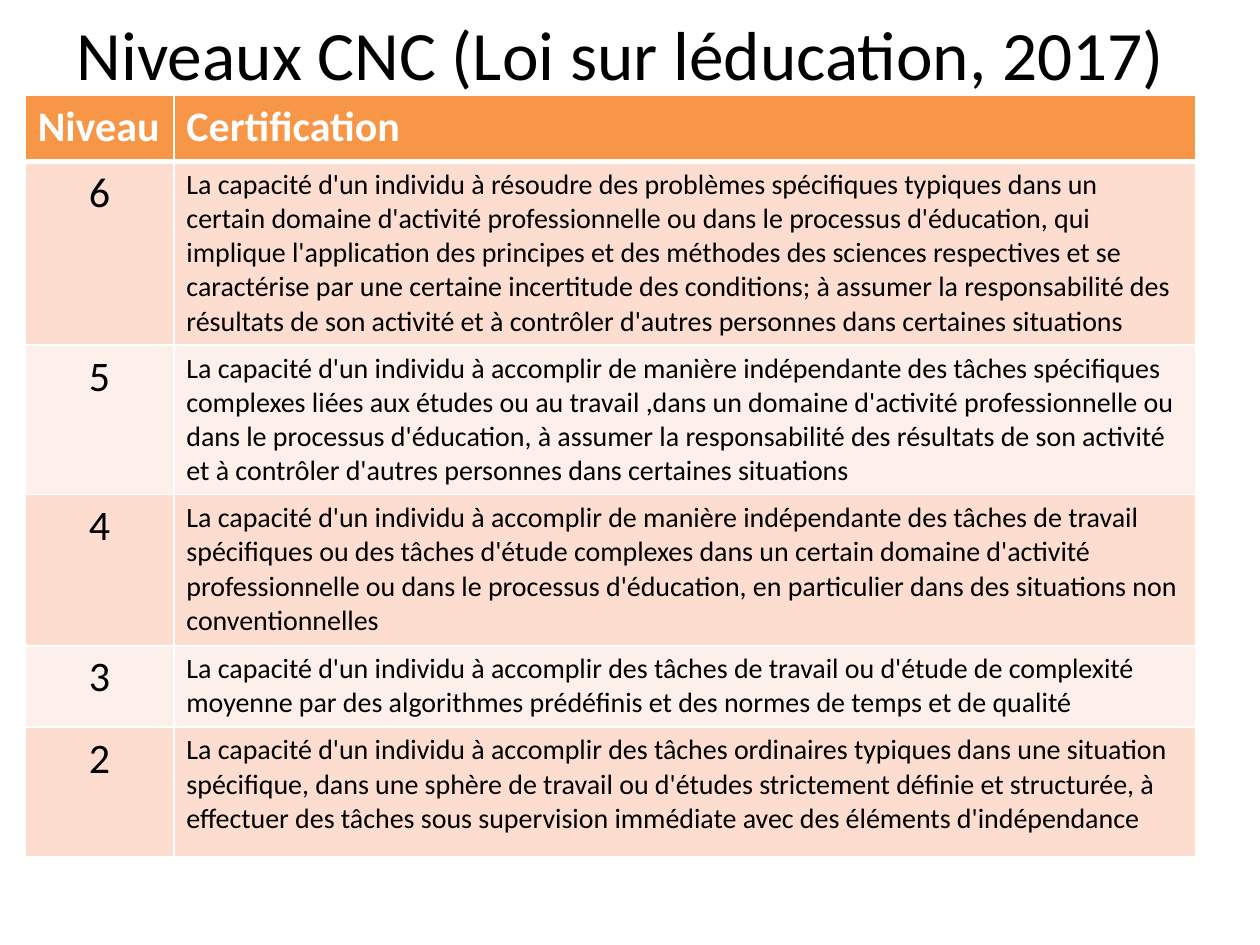
from dataclasses import dataclass

from lxml import etree
from pptx import Presentation
from pptx.dml.color import RGBColor
from pptx.enum.text import MSO_ANCHOR, MSO_AUTO_SIZE, PP_ALIGN
from pptx.oxml.ns import qn
from pptx.util import Inches, Pt

LEFT, CENTER = PP_ALIGN.LEFT, PP_ALIGN.CENTER
MIDDLE = MSO_ANCHOR.MIDDLE
NO_FIT = MSO_AUTO_SIZE.NONE
TITLE_ONLY = 5


@dataclass(frozen=True)
class Theme:
    font: str = "Calibri"
    text: str = "000000"
    light: str = "FFFFFF"
    header: str = "F79646"
    bands: tuple = ("FCDDCF", "FDEFE9")
    title_size: float = 39.6
    level_size: float = 24
    body_size: float = 16
    rule: float = 1
    header_rule: float = 3


THEME = Theme()
TITLE = "Niveaux CNC (Loi sur léducation, 2017)"
HEADERS = ("Niveau", "Certification")
LEVELS = [
    ("6", "La capacité d'un individu à résoudre des problèmes spécifiques typiques "
          "dans un certain domaine d'activité professionnelle ou dans le processus "
          "d'éducation, qui implique l'application des principes et des méthodes des "
          "sciences respectives et se caractérise par une certaine incertitude des "
          "conditions; à assumer la responsabilité des résultats de son activité et à "
          "contrôler d'autres personnes dans certaines situations"),
    ("5", "La capacité d'un individu à accomplir de manière indépendante des tâches "
          "spécifiques complexes liées aux études ou au travail ,dans un domaine "
          "d'activité professionnelle ou dans le processus d'éducation, à assumer la "
          "responsabilité des résultats de son activité et à contrôler d'autres "
          "personnes dans certaines situations"),
    ("4", "La capacité d'un individu à accomplir de manière indépendante des tâches de "
          "travail spécifiques ou des tâches d'étude complexes dans un certain domaine "
          "d'activité professionnelle ou dans le processus d'éducation, en particulier "
          "dans des situations non conventionnelles"),
    ("3", "La capacité d'un individu à accomplir des tâches de travail ou d'étude de "
          "complexité moyenne par des algorithmes prédéfinis et des normes de temps et "
          "de qualité"),
    ("2", "La capacité d'un individu à accomplir des tâches ordinaires typiques dans une "
          "situation spécifique, dans une sphère de travail ou d'études strictement "
          "définie et structurée, à effectuer des tâches sous supervision immédiate avec "
          "des éléments d'indépendance"),
]
COL_WIDTHS = (1.18, 8.11)
ROW_HEIGHTS = (0.52, 1.45, 1.18, 1.2, 0.63, 1.03)


def write(tf, text, size, color, align=LEFT, bold=False):
    tf.text = text
    p = tf.paragraphs[0]
    p.alignment = align
    font = p.runs[0].font
    font.name, font.size, font.bold = THEME.font, Pt(size), bold
    font.color.rgb = RGBColor.from_string(color)


def set_borders(cell, bottom):
    tc_pr = cell._tc.get_or_add_tcPr()
    widths = {"lnL": THEME.rule, "lnR": THEME.rule, "lnT": THEME.rule, "lnB": bottom}
    for tag, width in widths.items():
        ln = etree.SubElement(tc_pr, qn(f"a:{tag}"), w=str(Pt(width)))
        fill = etree.SubElement(ln, qn("a:solidFill"))
        etree.SubElement(fill, qn("a:srgbClr"), val=THEME.light)


def style_cell(cell, fill, bottom=THEME.rule):
    set_borders(cell, bottom)
    cell.fill.solid()
    cell.fill.fore_color.rgb = RGBColor.from_string(fill)


def add_title(slide, left, top, width, height):
    sp = slide.shapes.title
    sp.left, sp.top, sp.width, sp.height = map(Inches, (left, top, width, height))
    tf = sp.text_frame
    tf.word_wrap = True
    tf.auto_size = NO_FIT
    tf.vertical_anchor = MIDDLE
    write(tf, TITLE, THEME.title_size, THEME.text, CENTER)


def add_levels_table(slide, left, top, width, height):
    box = map(Inches, (left, top, width, height))
    table = slide.shapes.add_table(len(LEVELS) + 1, len(HEADERS), *box).table
    for col, w in zip(table.columns, COL_WIDTHS):
        col.width = Inches(w)
    for row, h in zip(table.rows, ROW_HEIGHTS):
        row.height = Inches(h)
    for c, text in enumerate(HEADERS):
        cell = table.cell(0, c)
        style_cell(cell, THEME.header, THEME.header_rule)
        write(cell.text_frame, text, THEME.level_size, THEME.light, bold=True)
    formats = ((THEME.level_size, CENTER), (THEME.body_size, LEFT))
    for i, level in enumerate(LEVELS):
        for c, (text, (size, align)) in enumerate(zip(level, formats)):
            cell = table.cell(i + 1, c)
            style_cell(cell, THEME.bands[i % 2])
            write(cell.text_frame, text, size, THEME.text, align)


def main():
    prs = Presentation()
    prs.slide_width, prs.slide_height = Inches(10), Inches(7.5)
    slide = prs.slides.add_slide(prs.slide_layouts[TITLE_ONLY])
    add_levels_table(slide, 0.2, 0.76, sum(COL_WIDTHS), sum(ROW_HEIGHTS))
    add_title(slide, 0.35, 0, 9.15, 0.84)
    prs.save("out.pptx")


if __name__ == "__main__":
    main()
